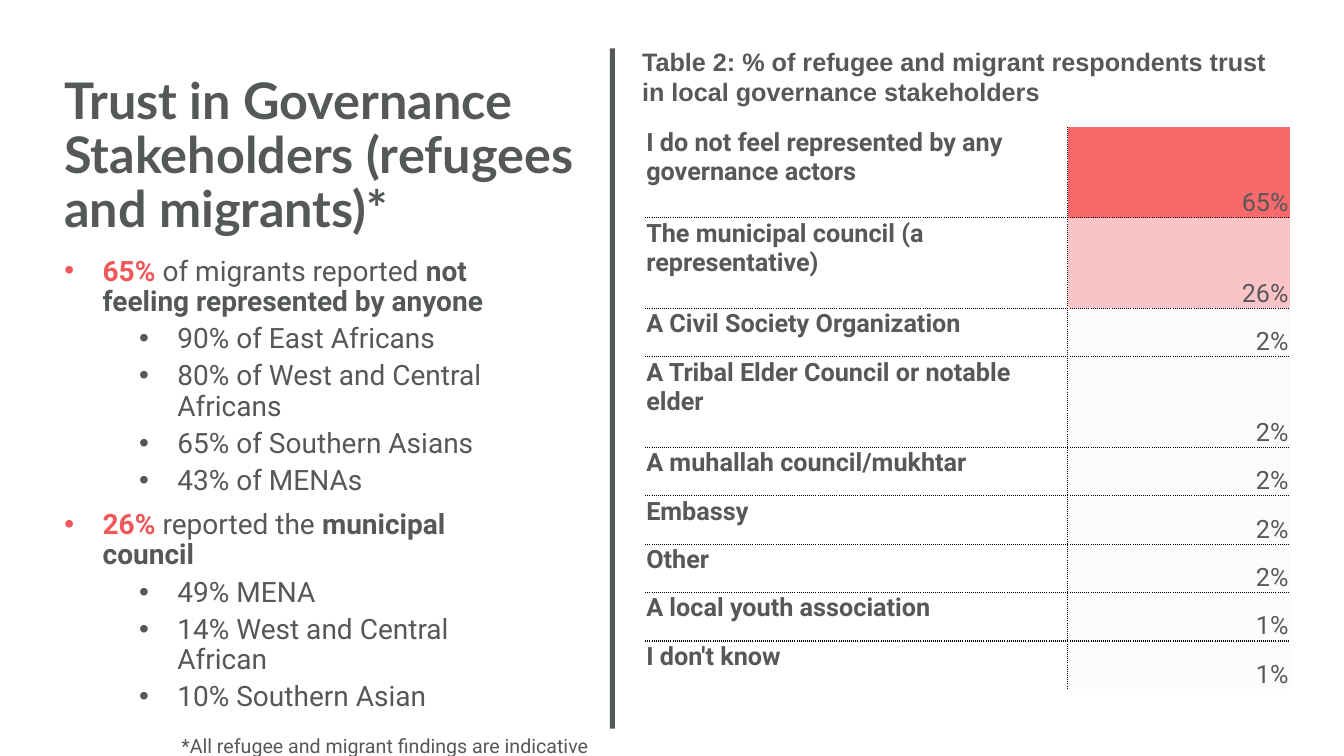
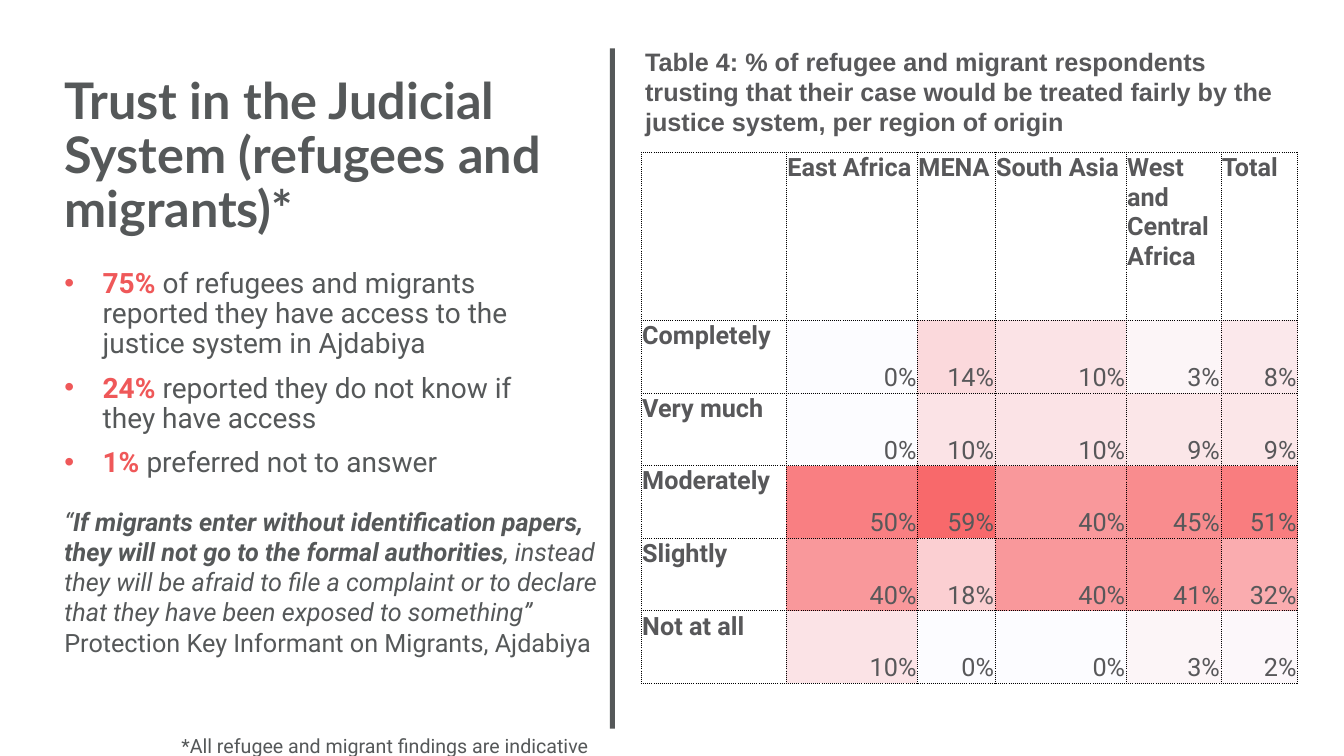
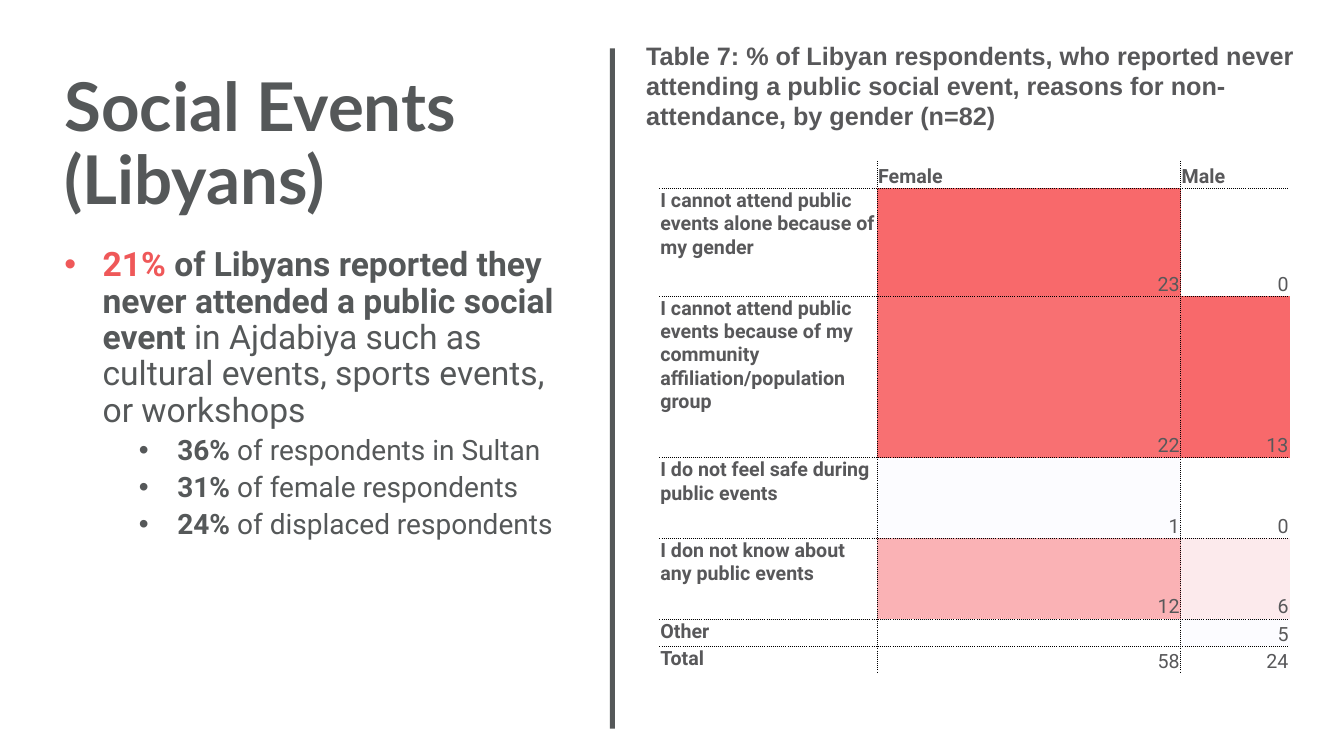
"""Build three slides on trust and social events in Ajdabiya."""
from lxml.etree import SubElement as Sub
from pptx import Presentation
from pptx.dml.color import RGBColor
from pptx.enum.shapes import MSO_SHAPE as Kind
from pptx.enum.text import MSO_ANCHOR as Anchor, PP_ALIGN as Align
from pptx.oxml.ns import qn
from pptx.util import Inches, Pt

GREY, INK, RED = "555859", "58585A", "EF5859"
HOT, COLD = (0xF8, 0x69, 0x6B), (0xFC, 0xFC, 0xFF)
PLAIN = "{2D5ABB26-0587-4C30-8999-92F81FD0307C}"
NOTE = "*All refugee and migrant findings are indicative"


def tint(code):
    """Turn a hex string into a colour."""
    return RGBColor.from_string(code)


def put(page, box, lines, size, name="Roboto", color=GREY, space=None):
    """Add a text box; a line is (level, runs), a run is (text, marks)."""
    frame = page.shapes.add_textbox(*map(Inches, box)).text_frame
    frame.word_wrap = True
    for i, (level, runs) in enumerate(lines):
        para = frame.paragraphs[0] if i == 0 else frame.add_paragraph()
        if space:
            para.line_spacing = space
        if level:
            para.space_before = Pt(10 if level == 1 else 5) if i else Pt(0)
            props = para._p.get_or_add_pPr()
            props.set("marL", str(Inches(0.38 if level == 1 else 1.12)))
            props.set("indent", str(Inches(-0.38)))
            Sub(Sub(props, qn("a:buClr")), qn("a:srgbClr"), val=RED if level == 1 else GREY)
            Sub(props, qn("a:buFont"), typeface="Arial")
            Sub(props, qn("a:buChar"), char="•")
        font = para.font
        font.name, font.size = name, Pt(min(size, 20) if level == 2 else size)
        font.color.rgb = tint(color)
        for text, marks in runs:
            run = para.add_run()
            run.text = text
            if "b" in marks:
                run.font.bold = True
            if "i" in marks:
                run.font.italic = True
            if "r" in marks:
                run.font.color.rgb = tint(RED)


slides = [
    dict(
        title="Trust in Governance Stakeholders (refugees and migrants)*",
        head=(0.54, 0.7, 5.82, 0.64), big=36,
        body=(0.54, 2.5, 4.95, 4.73), size=20,
        points=[
            (1, [("65% ", "br"), ("of migrants reported ", ""),
                 ("not feeling represented by anyone", "b")]),
            (2, [("90% of East Africans", "")]),
            (2, [("80% of West and Central Africans", "")]),
            (2, [("65% of Southern Asians", "")]),
            (2, [("43% of MENAs", "")]),
            (1, [("26% ", "br"), ("reported the ", ""), ("municipal council", "b")]),
            (2, [("49% MENA", "")]),
            (2, [("14% West and Central African", "")]),
            (2, [("10% Southern Asian", "")]),
        ],
        quote=[], note=NOTE,
        label="Table 2: % of refugee and migrant respondents trust in local "
              "governance stakeholders",
        place=(6.27, 0.41, 6.67, 0.71),
        spot=(6.4, 1.26), cols=[4.19, 2.2],
        rows=[0.9, 0.9, 0.48, 0.9] + [0.48] * 5,
        cells=[
            ["I do not feel represented by any governance actors", 65],
            ["The municipal council (a representative)", 26],
            ["A Civil Society Organization", 2],
            ["A Tribal Elder Council or notable elder", 2],
            ["A muhallah council/mukhtar", 2],
            ["Embassy", 2],
            ["Other", 2],
            ["A local youth association", 1],
            ["I don't know", 1],
        ],
        scale=[(1, 65)], unit="%", type=18, box=False, top=Anchor.TOP,
        line=1, dash="sysDot",
    ),
    dict(
        title="Trust in the Judicial System (refugees and migrants)*",
        head=(0.54, 0.7, 5.35, 0.64), big=36,
        body=(0.54, 2.62, 4.95, 4.69), size=20,
        points=[
            (1, [("75% ", "br"), ("of refugees and migrants reported they have access "
                                  "to the justice system in Ajdabiya", "")]),
            (1, [("24% ", "br"), ("reported they do not know if they have access", "")]),
            (1, [("1% ", "br"), ("preferred not to answer", "")]),
        ],
        quote=[
            (0, [("“", "i"),
                 ("If migrants enter without identification papers, they will not go "
                  "to the formal authorities", "bi"),
                 (", instead they will be afraid to file a complaint or to declare "
                  "that they have been exposed to something”", "i")]),
            (0, [("Protection Key Informant on Migrants, Ajdabiya", "")]),
        ],
        note=NOTE,
        label="Table 4: % of refugee and migrant respondents trusting that their case "
              "would be treated fairly by the justice system, per region of origin",
        place=(6.3, 0.41, 6.67, 1.01),
        spot=(6.36, 1.51), cols=[1.44, 1.3, 0.77, 1.3, 0.94, 0.76],
        rows=[1.67] + [0.72] * 5,
        cells=[
            ["", "East Africa", "MENA", "South Asia", "West and Central Africa", "Total"],
            ["Completely", 0, 14, 10, 3, 8],
            ["Very much", 0, 10, 10, 9, 9],
            ["Moderately", 50, 59, 40, 45, 51],
            ["Slightly", 40, 18, 40, 41, 32],
            ["Not at all", 10, 0, 0, 3, 2],
        ],
        scale=[(0, 59)] * 5, unit="%", type=18, box=True, top=Anchor.TOP,
        line=0.5, dash="dot",
    ),
    dict(
        title="Social Events (Libyans)",
        head=(0.54, 0.68, 5.2, 0.64), big=48,
        body=(0.54, 2.41, 5.2, 4.41), size=24,
        points=[
            (1, [("21%", "br"),
                 (" of Libyans reported they never attended a public social event ", "b"),
                 ("in Ajdabiya such as cultural events, sports events, or workshops", "")]),
            (2, [("36% ", "b"), ("of respondents in Sultan", "")]),
            (2, [("31% ", "b"), ("of female respondents", "")]),
            (2, [("24% ", "b"), ("of displaced respondents", "")]),
        ],
        quote=[], note="",
        label="Table 7: % of Libyan respondents, who reported never attending a public "
              "social event, reasons for non-attendance, by gender (n=82)",
        place=(6.31, 0.35, 6.67, 1.01),
        spot=(6.54, 1.6), cols=[2.16, 3.01, 1.08],
        rows=[0.27, 1.07, 1.6, 0.8, 0.8, 0.27, 0.27],
        cells=[
            ["", "Female", "Male"],
            ["I cannot attend public events alone because of my gender", 23, 0],
            ["I cannot attend public events because of my community "
             "affiliation/population group", 22, 13],
            ["I do not feel safe during public events", 1, 0],
            ["I don not know about any public events", 12, 6],
            ["Other", "", 5],
            ["Total", 58, 24],
        ],
        scale=[(1, 23), (5, 13)], unit="", type=14, box=False, top=Anchor.BOTTOM,
        line=0.5, dash="dot",
    ),
]

deck = Presentation()
deck.slide_width, deck.slide_height = Inches(13.33), Inches(7.5)

for data in slides:
    page = deck.slides.add_slide(deck.slide_layouts[6])
    bar = page.shapes.add_shape(Kind.RECTANGLE, *map(Inches, (6.05, 0.48, 0.05, 6.75)))
    bar.shadow.inherit = False
    bar.fill.solid()
    bar.fill.fore_color.rgb = tint(GREY)
    bar.line.fill.background()

    put(page, data["head"], [(0, [(data["title"], "b")])], data["big"], "Lato", space=0.9)
    put(page, data["body"], data["points"], data["size"], space=0.9)
    put(page, data["place"], [(0, [(data["label"], "b")])], 18, "Arial", INK)
    if data["quote"]:
        put(page, (0.54, 4.97, 5.5, 1.92), data["quote"], 18)
    if data["note"]:
        put(page, (1.7, 7.23, 9.15, 0.34), [(0, [(data["note"], "")])], 14)

    cols, rows, box = data["cols"], data["rows"], data["box"]
    size = (sum(cols), sum(rows))
    grid = page.shapes.add_table(len(rows), len(cols),
                                 *map(Inches, data["spot"] + size)).table
    grid.first_row = grid.horz_banding = False
    grid._tbl.tblPr.find(qn("a:tableStyleId")).text = PLAIN
    for col, width in zip(grid.columns, cols):
        col.width = Inches(width)
    for row, height in zip(grid.rows, rows):
        row.height = Inches(height)

    for r, values in enumerate(data["cells"]):
        for c, value in enumerate(values):
            cell = grid.cell(r, c)
            cell.margin_left = cell.margin_right = cell.margin_top = Inches(0.01)
            cell.margin_bottom = 0
            props = cell._tc.get_or_add_tcPr()
            edges = dict(L=c > 0, R=c < len(cols) - 1, T=r > 0, B=r < len(rows) - 1)
            for side, inner in edges.items():
                if inner or box:
                    edge = Sub(props, qn("a:ln" + side), w=str(Pt(data["line"])))
                    Sub(Sub(edge, qn("a:solidFill")), qn("a:srgbClr"), val="000000")
                    Sub(edge, qn("a:prstDash"), val=data["dash"])
            cell.fill.background()
            para = cell.text_frame.paragraphs[0]
            if value == "":
                Sub(para._p, qn("a:endParaRPr"), sz=str(data["type"] * 100))
                continue
            number = isinstance(value, int)
            font = para.font
            font.name, font.size, font.bold = "Roboto", Pt(data["type"]), not number
            font.color.rgb = tint(INK)
            para.add_run().text = f"{value}{data['unit']}" if number else value
            if number:
                para.alignment = Align.RIGHT
                cell.vertical_anchor = Anchor.BOTTOM
                low, high = data["scale"][c - 1]
                if low <= value <= high:
                    part = (value - low) / (high - low)
                    mix = [round(a + (b - a) * part) for a, b in zip(COLD, HOT)]
                    cell.fill.solid()
                    cell.fill.fore_color.rgb = RGBColor(*mix)
            else:
                cell.vertical_anchor = data["top"] if r == 0 else Anchor.TOP

deck.save("out.pptx")
